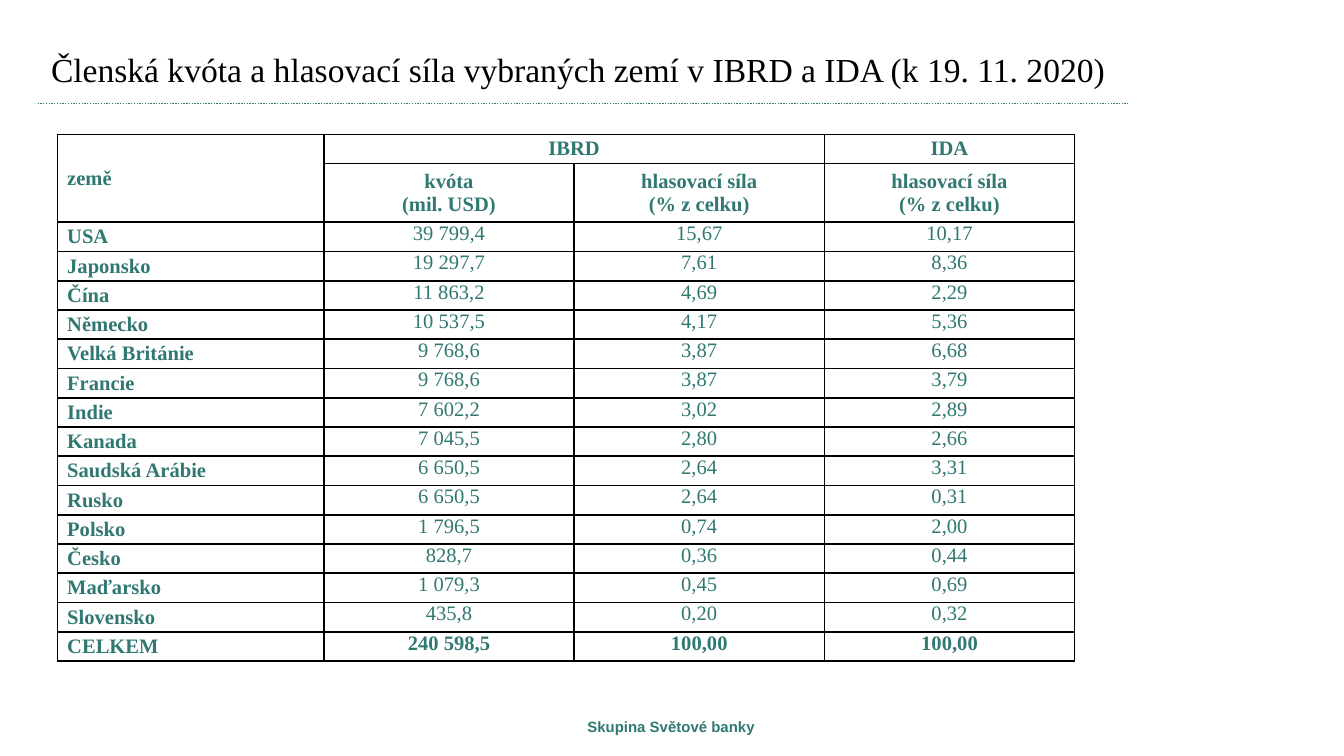
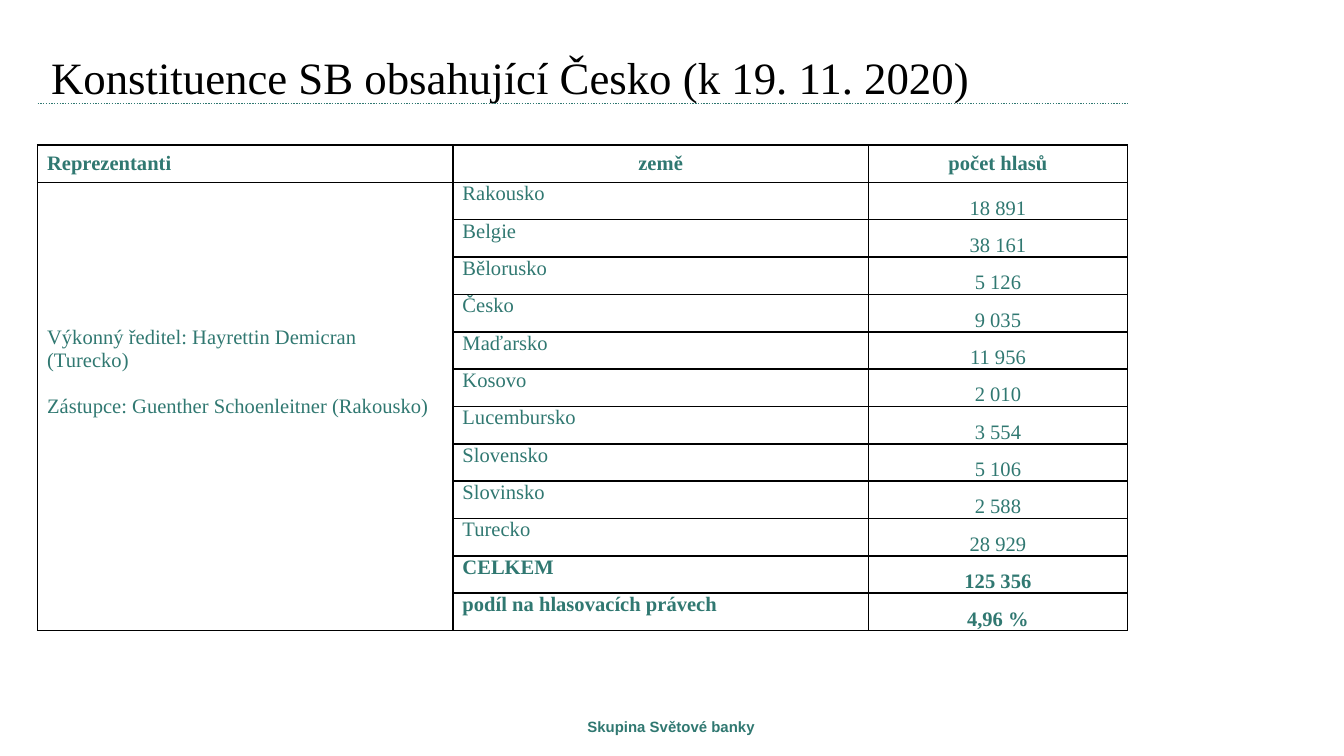
import dataclasses

import lxml.etree
import pptx
import pptx.dml.color
import pptx.enum.dml
import pptx.enum.shapes
import pptx.enum.text
import pptx.oxml.ns
import pptx.util

Cm = pptx.util.Cm
Pt = pptx.util.Pt
qn = pptx.oxml.ns.qn
LEFT = pptx.enum.text.PP_ALIGN.LEFT
CENTER = pptx.enum.text.PP_ALIGN.CENTER
TOP = pptx.enum.text.MSO_ANCHOR.TOP
MIDDLE = pptx.enum.text.MSO_ANCHOR.MIDDLE
BOTTOM = pptx.enum.text.MSO_ANCHOR.BOTTOM


@dataclasses.dataclass(frozen=True)
class Theme:
    green: str = "307871"
    black: str = "000000"
    serif: str = "Times New Roman"
    sans: str = "Arial"
    table_size: int = 11
    footer_size: int = 8
    rule_width: float = 0.75
    border_width: int = 1


theme = Theme()


def write(paragraph, text, font, size, color, bold, align):
    paragraph.alignment = align
    run = paragraph.add_run()
    run.text = text
    run.font.name = font
    run.font.size = Pt(size)
    run.font.bold = bold
    run.font.color.rgb = pptx.dml.color.RGBColor.from_string(color)


def add_borders(cell):
    properties = cell._tc.get_or_add_tcPr()
    for side in ("a:lnL", "a:lnR", "a:lnT", "a:lnB"):
        line = lxml.etree.SubElement(properties, qn(side), w=str(Pt(theme.border_width)))
        fill = lxml.etree.SubElement(line, qn("a:solidFill"))
        lxml.etree.SubElement(fill, qn("a:srgbClr"), val=theme.black)


# A line feed inside a cell separates paragraphs; empty cells belong to a merge.
quotas = [
    ("země", "IBRD", "", "IDA"),
    ("", "kvóta\n(mil. USD)", "hlasovací síla\n(% z celku)", "hlasovací síla\n(% z celku)"),
    ("USA", "39 799,4", "15,67", "10,17"),
    ("Japonsko", "19 297,7", "7,61", "8,36"),
    ("Čína", "11 863,2", "4,69", "2,29"),
    ("Německo", "10 537,5", "4,17", "5,36"),
    ("Velká Británie", "9 768,6", "3,87", "6,68"),
    ("Francie", "9 768,6", "3,87", "3,79"),
    ("Indie", "7 602,2", "3,02", "2,89"),
    ("Kanada", "7 045,5", "2,80", "2,66"),
    ("Saudská Arábie", "6 650,5", "2,64", "3,31"),
    ("Rusko", "6 650,5", "2,64", "0,31"),
    ("Polsko", "1 796,5", "0,74", "2,00"),
    ("Česko", "828,7", "0,36", "0,44"),
    ("Maďarsko", "1 079,3", "0,45", "0,69"),
    ("Slovensko", "435,8", "0,20", "0,32"),
    ("CELKEM", "240 598,5", "100,00", "100,00"),
]
representatives = (
    "Výkonný ředitel: Hayrettin Demicran (Turecko)\n"
    "Zástupce: Guenther Schoenleitner (Rakousko)"
)
constituency = [
    ("Reprezentanti", "země", "počet hlasů"),
    (representatives, "Rakousko", "18 891"),
    ("", "Belgie", "38 161"),
    ("", "Bělorusko", "5 126"),
    ("", "Česko", "9 035"),
    ("", "Maďarsko", "11 956"),
    ("", "Kosovo", "2 010"),
    ("", "Lucembursko", "3 554"),
    ("", "Slovensko", "5 106"),
    ("", "Slovinsko", "2 588"),
    ("", "Turecko", "28 929"),
    ("", "CELKEM", "125 356"),
    ("", "podíl na hlasovacích právech", "4,96 %"),
]

pages = [
    dict(
        title="Členská kvóta a hlasovací síla vybraných zemí v IBRD a IDA (k 19. 11. 2020)",
        title_size=18, title_lift=0.28,
        rows=quotas, left=1.09, top=2.54, height=9.97,
        widths=(5.03, 4.73, 4.73, 4.73), double_rows=(1,),
        merges=[(0, 0, 1, 0), (0, 1, 0, 2)],
        header_rows=2, total_rows=1, bold_columns=(0,),
        aligns=(LEFT, CENTER, CENTER, CENTER), anchors=(MIDDLE, TOP, TOP, TOP),
    ),
    dict(
        title="Konstituence SB obsahující Česko (k 19. 11. 2020)",
        title_size=24, title_lift=0,
        rows=constituency, left=0.71, top=2.74, height=9.19,
        widths=(7.85, 7.85, 4.9), double_rows=(),
        merges=[(1, 0, 12, 0)],
        header_rows=1, total_rows=2, bold_columns=(),
        aligns=(LEFT, LEFT, CENTER), anchors=(MIDDLE, TOP, BOTTOM),
    ),
]

presentation = pptx.Presentation()
presentation.slide_width = Cm(25.4)
presentation.slide_height = Cm(14.29)
title_only = presentation.slide_layouts[5]

for page in pages:
    slide = presentation.slides.add_slide(title_only)

    rule = slide.shapes.add_connector(
        pptx.enum.shapes.MSO_CONNECTOR.STRAIGHT, Cm(0.71), Cm(1.96), Cm(21.31), Cm(1.96))
    rule.line.color.rgb = pptx.dml.color.RGBColor.from_string(theme.green)
    rule.line.width = Pt(theme.rule_width)
    rule.line.dash_style = pptx.enum.dml.MSO_LINE.ROUND_DOT
    lxml.etree.SubElement(rule._element.spPr, qn("a:effectLst"))

    footer = slide.shapes.add_textbox(Cm(7.49), Cm(13.44), Cm(10.39), Cm(0.58)).text_frame
    footer.word_wrap = True
    footer.vertical_anchor = MIDDLE
    footer.margin_top = footer.margin_bottom = 0
    write(footer.paragraphs[0], "Skupina Světové banky", theme.sans, theme.footer_size,
          theme.green, True, CENTER)

    title = slide.shapes.title
    title.left, title.top, title.width, title.height = Cm(0.71), Cm(0.74), Cm(20.6), Cm(1.22)
    heading = title.text_frame
    heading.auto_size = pptx.enum.text.MSO_AUTO_SIZE.NONE
    heading.word_wrap = True
    heading.vertical_anchor = BOTTOM
    heading.margin_top = 0
    heading.margin_bottom = Cm(page["title_lift"])
    write(heading.paragraphs[0], page["title"], theme.serif, page["title_size"],
          theme.black, False, LEFT)

    rows, widths = page["rows"], page["widths"]
    table = slide.shapes.add_table(
        len(rows), len(widths), Cm(page["left"]), Cm(page["top"]),
        Cm(sum(widths)), Cm(page["height"])).table
    table.first_row = table.horz_banding = False
    for column, width in zip(table.columns, widths):
        column.width = Cm(width)
    row_unit = page["height"] / (len(rows) + len(page["double_rows"]))
    for r, row in enumerate(table.rows):
        row.height = Cm(row_unit * (2 if r in page["double_rows"] else 1))
    for r1, c1, r2, c2 in page["merges"]:
        table.cell(r1, c1).merge(table.cell(r2, c2))

    for r, values in enumerate(rows):
        is_header = r < page["header_rows"]
        is_total = r >= len(rows) - page["total_rows"]
        for c, value in enumerate(values):
            cell = table.cell(r, c)
            add_borders(cell)
            cell.fill.background()
            cell.margin_left = cell.margin_right = Cm(0.18)
            cell.margin_top = cell.margin_bottom = 0
            cell.vertical_anchor = MIDDLE if is_header else page["anchors"][c]
            if not value:
                continue
            align = CENTER if is_header and c > 0 else page["aligns"][c]
            bold = is_header or is_total or c in page["bold_columns"]
            for i, line in enumerate(value.split("\n")):
                frame = cell.text_frame
                paragraph = frame.add_paragraph() if i else frame.paragraphs[0]
                write(paragraph, line, theme.serif, theme.table_size, theme.green, bold, align)

# The names of the representatives stand above the middle of their tall cell.
names = table.cell(1, 0)
names.margin_bottom = Cm(1.3)
names.text_frame.paragraphs[1].space_before = Pt(12)

presentation.save("out.pptx")
